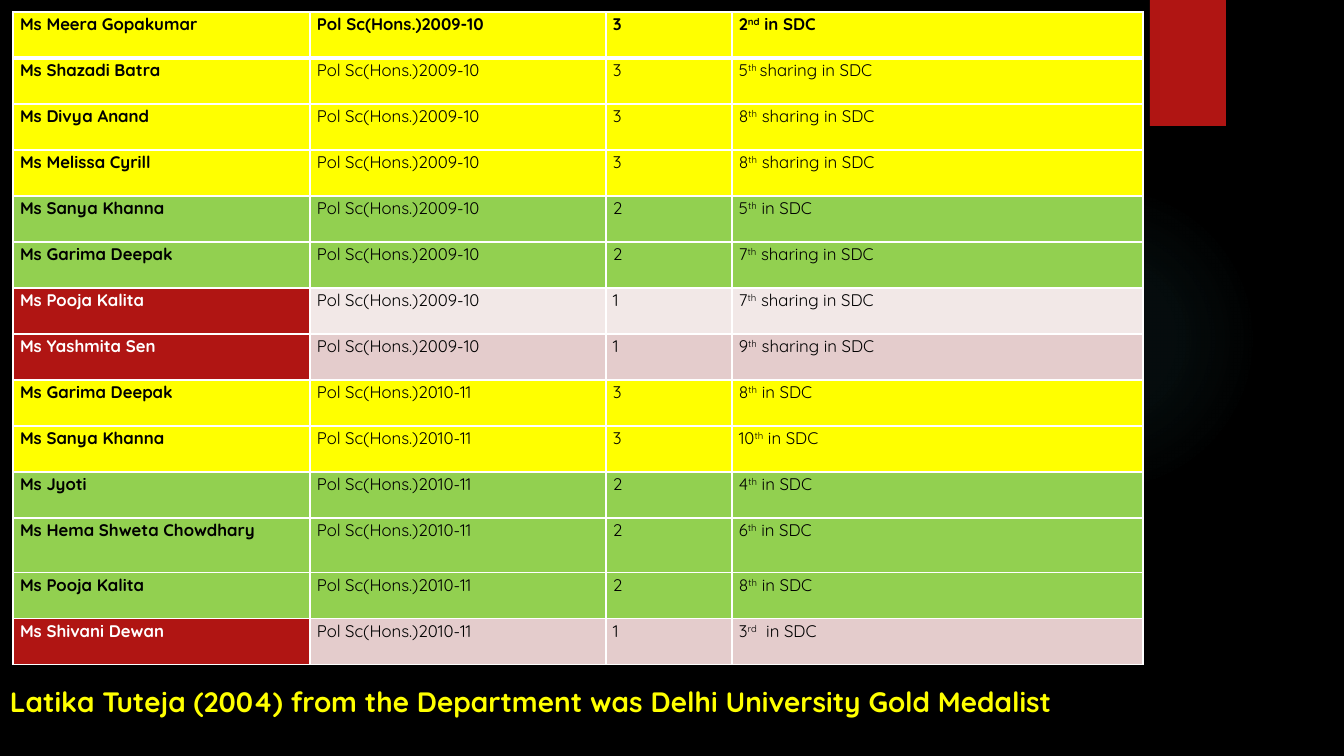
from pptx import Presentation
from pptx.dml.color import RGBColor
from pptx.enum.shapes import MSO_SHAPE
from pptx.oxml import parse_xml
from pptx.oxml.ns import nsdecls
from pptx.util import Emu, Pt

COLORS = {
    "background": "000000", "text": "000000", "light": "FFFFFF",
    "first": "FFFF00", "second": "92D050", "accent": "B01513",
    "band_even": "F2E8E7", "band_odd": "E4CCCC", "glow": "50B9C1",
}
FONT = "Quicksand"
COLUMN_WIDTHS = (297, 296, 126, 411)
ROW_HEIGHT, TALL_ROW_HEIGHT, TALL_ROW = 46, 55, 11

# Name, session, year of study, rank split into number | superscript | rest
STUDENTS = [
    ("Meera Gopakumar", "2009-10", 3, "2|nd| in SDC"),
    ("Shazadi Batra", "2009-10", 3, "5|th |sharing in SDC"),
    ("Divya Anand", "2009-10", 3, "8|th| sharing in SDC"),
    ("Melissa Cyrill", "2009-10", 3, "8|th| sharing in SDC"),
    ("Sanya Khanna", "2009-10", 2, "5|th| in SDC"),
    ("Garima Deepak", "2009-10", 2, "7|th| sharing in SDC"),
    ("Pooja Kalita", "2009-10", 1, "7|th| sharing in SDC"),
    ("Yashmita Sen", "2009-10", 1, "9|th| sharing in SDC"),
    ("Garima Deepak", "2010-11", 3, "8|th| in SDC"),
    ("Sanya Khanna", "2010-11", 3, "10|th| in SDC"),
    ("Jyoti", "2010-11", 2, "4|th| in SDC"),
    ("Hema Shweta Chowdhary", "2010-11", 2, "6|th| in SDC"),
    ("Pooja Kalita", "2010-11", 2, "8|th| in SDC"),
    ("Shivani Dewan", "2010-11", 1, "3|rd|  in SDC"),
]


def px(length):
    return Emu(round(length * 914400 / 100.8))


def set_attributes(target, values):
    for name, value in values.items():
        setattr(target, name, value)


def paint(fill, color):
    fill.solid()
    fill.fore_color.rgb = RGBColor.from_string(COLORS[color])


def add_run(paragraph, text, size, color, bold):
    run = paragraph.add_run()
    run.text = text
    set_attributes(run.font, {"name": FONT, "size": Pt(size), "bold": bold})
    run.font.color.rgb = RGBColor.from_string(COLORS[color])
    return run


def add_plain_shape(slide, kind, left, top, width, height):
    shape = slide.shapes.add_shape(kind, px(left), px(top), px(width), px(height))
    shape.shadow.inherit = False
    shape.line.fill.background()
    return shape


def add_glow(slide):
    glow = add_plain_shape(slide, MSO_SHAPE.OVAL, 949, 184, 310, 310)
    stops = "".join(
        f'<a:gs pos="{position}000"><a:srgbClr val="{COLORS["glow"]}">'
        f'<a:alpha val="{alpha}000"/></a:srgbClr></a:gs>'
        for position, alpha in ((0, 7), (36, 6), (69, 0)))
    gradient = parse_xml(
        f'<a:gradFill {nsdecls("a")} rotWithShape="1"><a:gsLst>{stops}</a:gsLst>'
        '<a:path path="circle"><a:fillToRect l="50000" t="50000" r="50000" '
        'b="50000"/></a:path></a:gradFill>')
    glow.element.spPr.insert(2, gradient)  # after position and geometry


def add_borders(cell, bottom_width):
    cell_properties = cell._tc.get_or_add_tcPr()
    for side, width in (("L", 1), ("R", 1), ("T", 1), ("B", bottom_width)):
        cell_properties.append(parse_xml(
            f'<a:ln{side} {nsdecls("a")} w="{Pt(width)}"><a:solidFill>'
            f'<a:srgbClr val="{COLORS["light"]}"/></a:solidFill></a:ln{side}>'))


def cell_colors(row, column, year):
    """Return the fill and text colour for a student's year of study."""
    if year > 1:
        return {3: "first", 2: "second"}[year], "text"
    if column == 0:
        return "accent", "light"
    return ("band_odd" if row % 2 else "band_even"), "text"


def fill_cell(cell, row, column, year, parts):
    fill_color, text_color = cell_colors(row, column, year)
    add_borders(cell, 3 if row == 0 else 1)
    paint(cell.fill, fill_color)
    set_attributes(cell, {"margin_left": px(7), "margin_right": px(7),
                          "margin_top": 0, "margin_bottom": 0})
    paragraph = cell.text_frame.paragraphs[0]
    paragraph.line_spacing = 1.07
    for index, part in enumerate(parts):
        run = add_run(paragraph, part, 12, text_color, row == 0 or column == 0)
        if index == 1:
            run._r.get_or_add_rPr().set("baseline", "30000")


def add_rank_table(slide):
    heights = [TALL_ROW_HEIGHT if row == TALL_ROW else ROW_HEIGHT
               for row in range(len(STUDENTS))]
    table = slide.shapes.add_table(
        len(STUDENTS), len(COLUMN_WIDTHS), px(13), px(12),
        px(sum(COLUMN_WIDTHS)), px(sum(heights))).table
    for column, width in zip(table.columns, COLUMN_WIDTHS):
        column.width = px(width)
    for row, (name, session, year, rank) in enumerate(STUDENTS):
        table.rows[row].height = px(heights[row])
        contents = ([f"Ms {name}"], [f"Pol Sc(Hons.){session}"], [str(year)],
                    rank.split("|"))
        for column, parts in enumerate(contents):
            fill_cell(table.cell(row, column), row, column, year, parts)


def add_medalist_note(slide):
    note = slide.shapes.add_textbox(0, px(680), px(1088), px(44)).text_frame
    note.word_wrap = True
    add_run(note.paragraphs[0],
            "Latika Tuteja (2004) from the Department was Delhi University Gold Medalist",
            20, "first", True)


def main():
    presentation = Presentation()
    set_attributes(presentation, {"slide_width": px(1344), "slide_height": px(756)})
    slide = presentation.slides.add_slide(presentation.slide_layouts[6])
    paint(slide.background.fill, "background")

    # Backdrop
    add_glow(slide)
    ribbon = add_plain_shape(slide, MSO_SHAPE.RECTANGLE, 1150, 0, 76, 126)
    paint(ribbon.fill, "accent")

    # Content
    add_rank_table(slide)
    add_medalist_note(slide)
    presentation.save("out.pptx")


if __name__ == "__main__":
    main()
